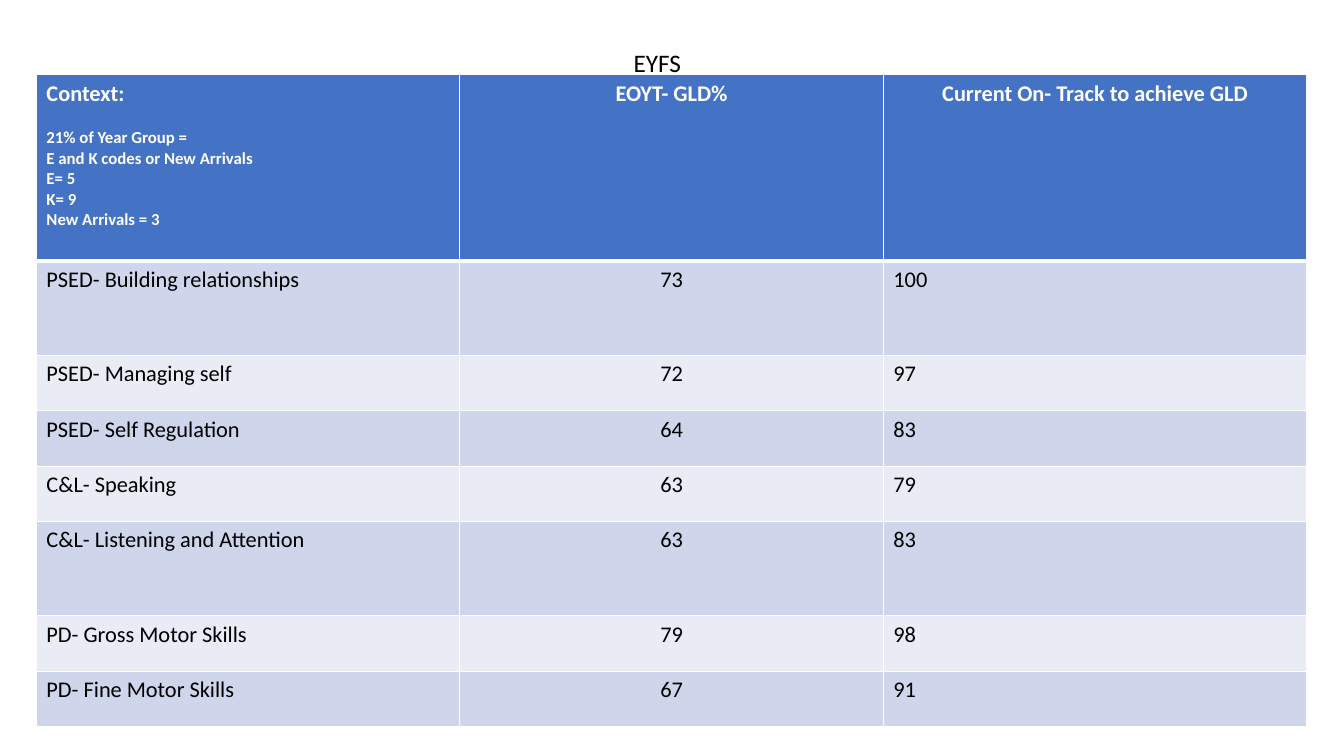
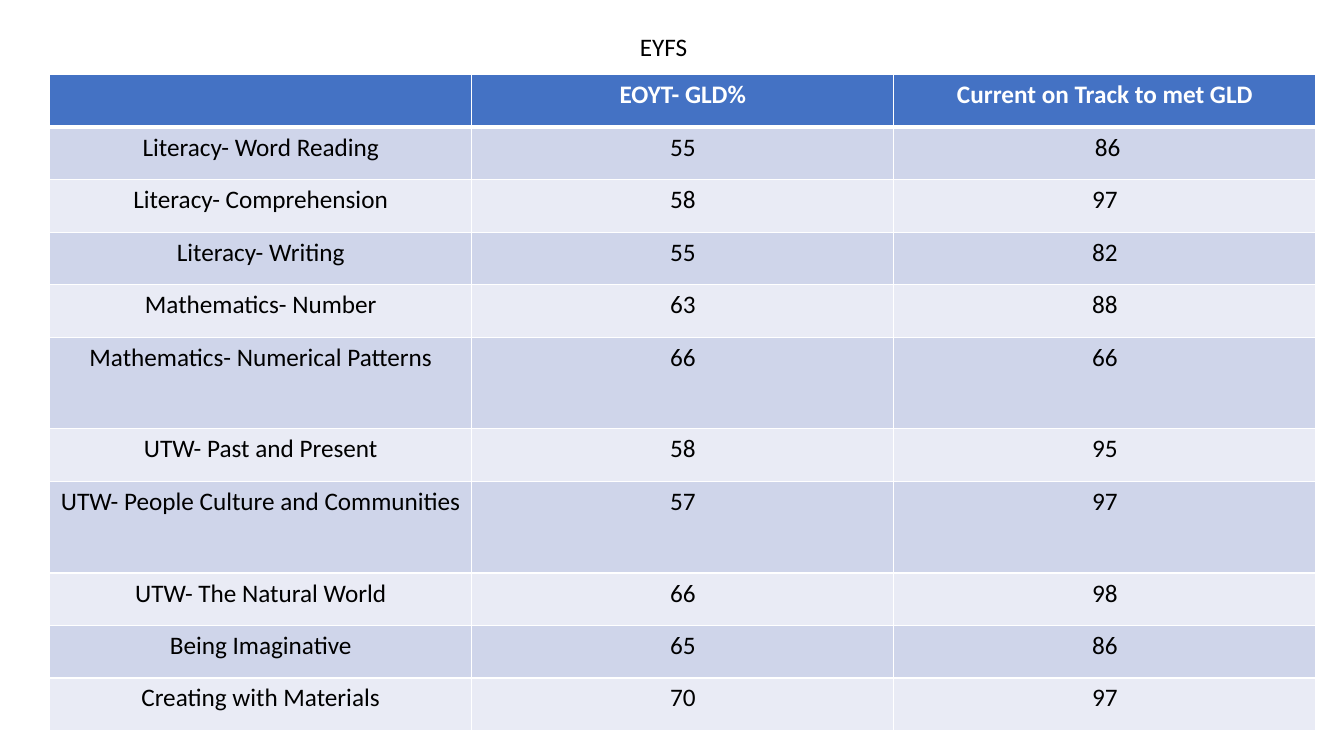
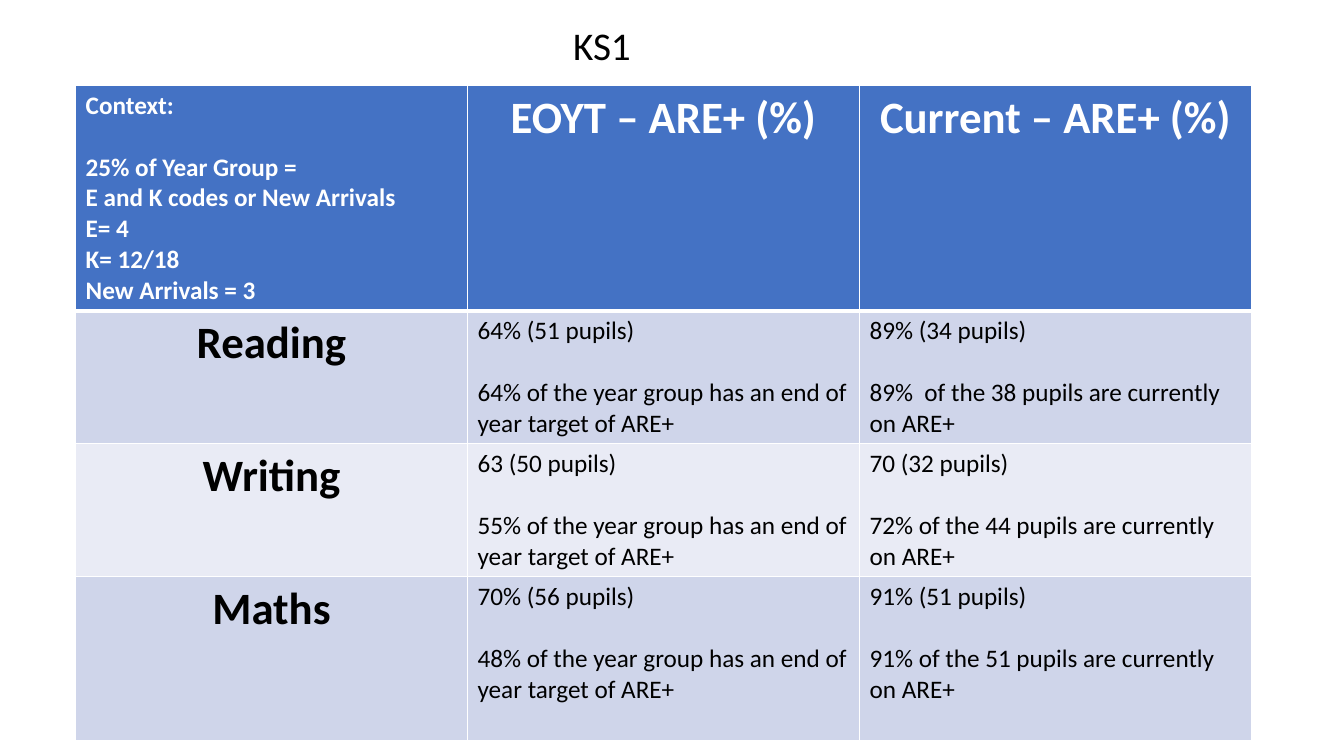
from lxml import etree
from pptx import Presentation
from pptx.dml.color import RGBColor
from pptx.enum.text import MSO_ANCHOR, PP_ALIGN
from pptx.oxml.ns import qn
from pptx.util import Pt

EMU_PER_PX = 6350
LEFT, CENTER = PP_ALIGN.LEFT, PP_ALIGN.CENTER
MIDDLE = MSO_ANCHOR.MIDDLE


def px(length):
    return length * EMU_PER_PX


class Deck:
    FONT = "Calibri"
    LINE_HEIGHT = 1.22
    COLORS = {
        "header": "4472C4",
        "odd_row": "CFD5EA",
        "even_row": "E9EBF5",
        "border": "FFFFFF",
        "header_text": "FFFFFF",
        "text": "000000",
    }

    def __init__(self):
        self.presentation = Presentation()
        self.presentation.slide_width = px(1920)
        self.presentation.slide_height = px(1080)
        self.slide = None

    def color(self, name):
        return RGBColor.from_string(self.COLORS[name])

    def add_slide(self):
        self.slide = self.presentation.slides.add_slide(self.presentation.slide_layouts[6])

    def set_text(self, paragraph, text, size, color, bold, align):
        paragraph.text = text
        paragraph.alignment = align
        font = paragraph.font
        font.name, font.size, font.bold = self.FONT, Pt(size), bold
        font.color.rgb = self.color(color)

    def title(self, text, left, top, height, size):
        box = self.slide.shapes.add_textbox(px(left), px(top), px(1656), px(height))
        frame = box.text_frame
        frame.word_wrap = True
        frame.vertical_anchor = MIDDLE
        heading = frame.paragraphs[0]
        self.set_text(heading, text, size, "text", False, CENTER)
        heading.line_spacing = 0.9

    def borders(self, cell, row):
        widths = {"L": 1, "R": 1, "T": 3 if row == 1 else 1, "B": 3 if row == 0 else 1}
        properties = cell._tc.get_or_add_tcPr()
        for position, (side, width) in enumerate(widths.items()):
            line = etree.Element(qn(f"a:ln{side}"), w=str(Pt(width)))
            fill = etree.SubElement(line, qn("a:solidFill"))
            etree.SubElement(fill, qn("a:srgbClr"), val=self.COLORS["border"])
            properties.insert(position, line)

    def cell(self, cell, row, text, sizes, bold, align):
        fill = "header" if row == 0 else "odd_row" if row % 2 else "even_row"
        cell.fill.solid()
        cell.fill.fore_color.rgb = self.color(fill)
        self.borders(cell, row)
        first_size, detail_size = sizes
        color = "text" if row else "header_text"
        for index, line in enumerate(text.split("\n")):
            frame = cell.text_frame
            paragraph = frame.add_paragraph() if index else frame.paragraphs[0]
            self.set_text(paragraph, line, detail_size if index else first_size, color, bold, align)
            if index == 1:
                paragraph.space_before = Pt(round(detail_size * self.LINE_HEIGHT, 1))

    def table(self, left, top, column_width, heights, rows, aligns, size,
              heading_size=None, detail_size=None, bold_labels=False):
        heading_size = heading_size or size
        detail_size = detail_size or size
        columns = len(aligns)
        table = self.slide.shapes.add_table(
            len(rows), columns, px(left), px(top),
            px(column_width * columns), px(sum(heights))).table
        for column in table.columns:
            column.width = px(column_width)
        for row, (height, texts) in enumerate(zip(heights, rows)):
            table.rows[row].height = px(height)
            for column, text in enumerate(texts):
                is_heading = (row == 0) != (column == 0)
                sizes = (heading_size if is_heading else size, detail_size)
                bold = row == 0 or (bold_labels and column == 0)
                header_align = CENTER if column else LEFT
                align = aligns[column] if row else header_align
                self.cell(table.cell(row, column), row, text, sizes, bold, align)


def context(share, e_codes, k_codes, arrivals):
    return (f"Context:\n{share}% of Year Group =\nE and K codes or New Arrivals\n"
            f"E= {e_codes}\nK= {k_codes}\nNew Arrivals = {arrivals}")


def target(summary, share):
    return f"{summary} pupils)\n{share}% of the year group has an end of year target of ARE+"


def current(summary, share, pupils):
    return f"{summary} pupils)\n{share} of the {pupils} pupils are currently on ARE+"


def main():
    deck = Deck()

    deck.add_slide()
    deck.title("EYFS", 111, -12, 209, 18)
    early_goals = [
        (context(21, 5, 9, 3), "EOYT- GLD%", "Current On- Track to achieve GLD"),
        ("PSED- Building relationships", "73", "100"),
        ("PSED- Managing self", "72", "97"),
        ("PSED- Self Regulation", "64", "83"),
        ("C&L- Speaking", "63", "79"),
        ("C&L- Listening and Attention", "63", "83"),
        ("PD- Gross Motor Skills", "79", "98"),
        ("PD- Fine Motor Skills", "67", "91"),
    ]
    deck.table(52, 107, 605, [266, 135, 79, 79, 79, 135, 79, 79], early_goals,
               (LEFT, CENTER, LEFT), 16, detail_size=12)

    deck.add_slide()
    deck.title("EYFS", 120, 17, 105, 18)
    subject_goals = [
        ("", "EOYT- GLD%", "Current on Track to met GLD"),
        ("Literacy- Word Reading", "55", " 86"),
        ("Literacy- Comprehension", "58", "97"),
        ("Literacy- Writing", "55", "82"),
        ("Mathematics- Number", "63", "88"),
        ("Mathematics- Numerical Patterns", "66", "66"),
        ("UTW- Past and Present", "58", "95"),
        ("UTW- People Culture and Communities", "57", "97"),
        ("UTW- The Natural World", "66", "98"),
        ("Being Imaginative", "65", "86"),
        ("Creating with Materials", "70", "97"),
    ]
    deck.table(71, 107, 603, [75] * 5 + [131, 75, 131] + [75] * 3, subject_goals,
               (CENTER, CENTER, CENTER), 18)

    deck.add_slide()
    deck.title("KS1", 32, -36, 209, 28)
    key_stage_results = [
        (context(25, 4, "12/18", 3), "EOYT – ARE+ (%)", "Current – ARE+ (%)"),
        ("Reading", target("64% (51", 64), current("89% (34", "89% ", 38)),
        ("Writing", target("63 (50", 55), current("70 (32", "72%", 44)),
        ("Maths", target("70% (56", 48), current("91% (51", "91%", 51)),
    ]
    deck.table(108, 122, 560, [322, 190, 190, 234], key_stage_results,
               (CENTER, LEFT, LEFT), 18, heading_size=32, bold_labels=True)

    deck.presentation.save("out.pptx")


if __name__ == "__main__":
    main()
